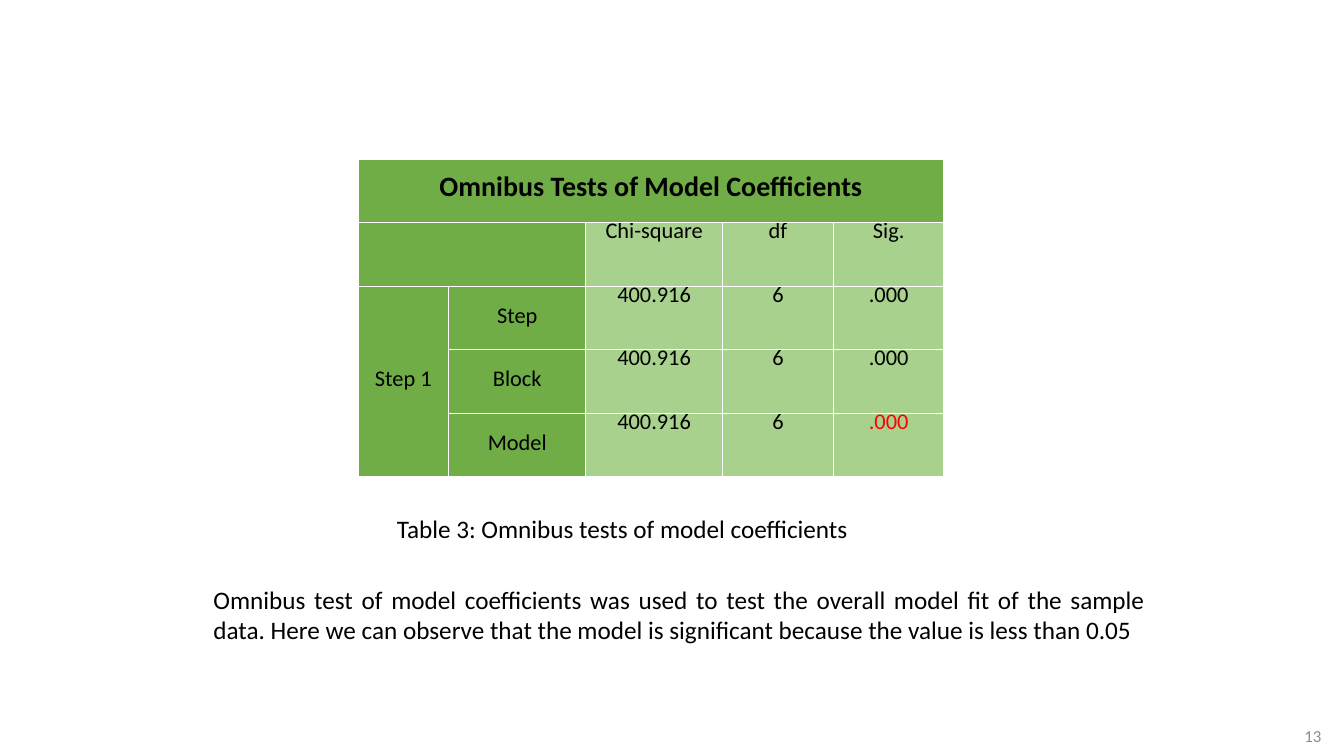
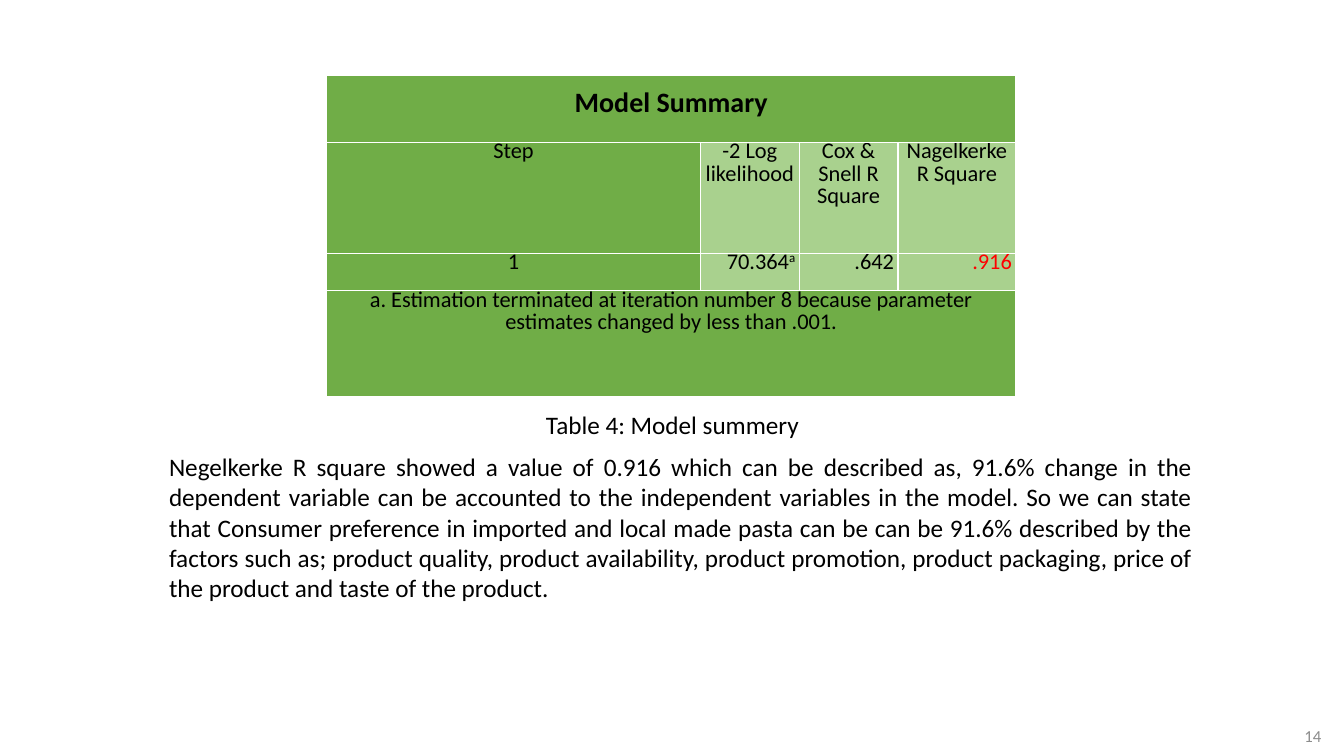
from dataclasses import dataclass

from lxml.etree import SubElement
from pptx import Presentation
from pptx.dml.color import RGBColor
from pptx.enum.text import MSO_ANCHOR, PP_ALIGN
from pptx.oxml.ns import qn
from pptx.slide import Slide
from pptx.table import _Cell
from pptx.util import Cm, Length, Pt


@dataclass(frozen=True)
class Theme:
    font: str = "Calibri"
    text: RGBColor = RGBColor(0x00, 0x00, 0x00)
    highlight: RGBColor = RGBColor(0xFF, 0x00, 0x00)
    page_number: RGBColor = RGBColor(0x8C, 0x8C, 0x8C)
    header_fill: RGBColor = RGBColor(0x70, 0xAD, 0x47)
    value_fill: RGBColor = RGBColor(0xA9, 0xD1, 0x8E)
    border: str = "FFFFFF"
    border_width: Length = Pt(1)
    title_size: Length = Pt(20)
    body_size: Length = Pt(18)
    cell_size: Length = Pt(16)
    cell_line: Length = Pt(16)
    number_size: Length = Pt(12)


THEME = Theme()


@dataclass(frozen=True)
class Entry:
    """One table cell; an entry that spans hides the None entries it covers."""
    text: str = ""
    header: bool = False
    title: bool = False
    highlight: bool = False
    superscript: str = ""
    align: PP_ALIGN = PP_ALIGN.CENTER
    anchor: MSO_ANCHOR = MSO_ANCHOR.TOP
    rows: int = 1
    columns: int = 1


@dataclass(frozen=True)
class TableLayout:
    left: float
    top: float
    widths: list[float]
    heights: list[float]
    entries: list[list[Entry | None]]


@dataclass(frozen=True)
class TextBlock:
    text: str
    left: float
    top: float
    width: float
    height: float
    align: PP_ALIGN = PP_ALIGN.LEFT
    anchor: MSO_ANCHOR = MSO_ANCHOR.TOP
    size: Length = THEME.body_size
    color: RGBColor = THEME.text


@dataclass(frozen=True)
class Page:
    number: int
    table: TableLayout
    caption: TextBlock
    body: TextBlock


def title(text: str, columns: int) -> list[Entry | None]:
    """A heading row across the whole table."""
    return [Entry(text, header=True, title=True, columns=columns)] + [None] * (columns - 1)


def side(text: str, rows: int = 1) -> Entry:
    """A row label at the left of the values."""
    return Entry(text, header=True, anchor=MSO_ANCHOR.MIDDLE, rows=rows)


def test_row(first: Entry | None, label: str, highlight: bool = False) -> list[Entry | None]:
    return [first, side(label), Entry("400.916"), Entry("6"), Entry(".000", highlight=highlight)]


OMNIBUS_TABLE = TableLayout(
    9.02, 4.01, [2.29, 3.45, 3.45, 2.79, 2.79], [1.6] * 5,
    [
        title("Omnibus Tests of Model Coefficients", 5),
        [Entry(header=True, columns=2), None, Entry("Chi-square"), Entry("df"), Entry("Sig.")],
        test_row(side("Step 1", rows=3), "Step"),
        test_row(None, "Block"),
        test_row(None, "Model", highlight=True),
    ],
)

SUMMARY_TABLE = TableLayout(
    8.23, 1.91, [9.42, 2.49, 2.49, 2.97], [1.68, 2.79, 0.95, 2.67],
    [
        title("Model Summary", 4),
        [Entry("Step", header=True), Entry("-2 Log likelihood"),
         Entry("Cox & Snell R Square"), Entry("Nagelkerke R Square")],
        [Entry("1", header=True),
         Entry("70.364", superscript="a", align=PP_ALIGN.RIGHT),
         Entry(".642", align=PP_ALIGN.RIGHT),
         Entry(".916", highlight=True, align=PP_ALIGN.RIGHT)],
        [Entry("a. Estimation terminated at iteration number 8 because parameter "
               "estimates changed by less than .001.", header=True, columns=4),
         None, None, None],
    ],
)

PAGES = [
    Page(
        13,
        OMNIBUS_TABLE,
        TextBlock("Table 3: Omnibus tests of model coefficients", 9.75, 12.8, 13.31, 1.02),
        TextBlock("Omnibus test of model coefficients was used to test the overall model fit "
                  "of the sample data. Here we can observe that the model is significant "
                  "because the value is less than 0.05",
                  5.13, 14.6, 23.98, 1.8, PP_ALIGN.JUSTIFY),
    ),
    Page(
        14,
        SUMMARY_TABLE,
        TextBlock("Table 4: Model summery", 13.51, 10.19, 7.34, 1.02),
        TextBlock("Negelkerke R square showed a value of 0.916 which can be described as, "
                  "91.6% change in the dependent variable can be accounted to the independent "
                  "variables in the model. So we can state that Consumer preference in imported "
                  "and local made pasta can be can be 91.6% described by the factors such as; "
                  "product quality, product availability, product promotion, product packaging, "
                  "price of the product and taste of the product.",
                  4.01, 11.25, 26.29, 4.88, PP_ALIGN.JUSTIFY),
    ),
]


def add_borders(cell: _Cell) -> None:
    properties = cell._tc.get_or_add_tcPr()
    for side_name in ("lnL", "lnR", "lnT", "lnB"):
        line = SubElement(properties, qn(f"a:{side_name}"), w=str(THEME.border_width))
        fill = SubElement(line, qn("a:solidFill"))
        SubElement(fill, qn("a:srgbClr"), val=THEME.border)


def fill_cell(cell: _Cell, entry: Entry) -> None:
    cell.fill.solid()
    cell.fill.fore_color.rgb = THEME.header_fill if entry.header else THEME.value_fill
    cell.margin_left = cell.margin_right = Cm(0.1)
    cell.margin_top = THEME.cell_line if entry.title else 0
    cell.margin_bottom = 0
    cell.vertical_anchor = entry.anchor
    paragraph = cell.text_frame.paragraphs[0]
    paragraph.alignment = entry.align
    paragraph.line_spacing = THEME.cell_line
    font = paragraph.font
    font.name = THEME.font
    font.size = THEME.title_size if entry.title else THEME.cell_size
    font.bold = entry.title
    font.color.rgb = THEME.highlight if entry.highlight else THEME.text
    if entry.text:
        paragraph.add_run().text = entry.text
    if entry.superscript:
        run = paragraph.add_run()
        run.text = entry.superscript
        run._r.get_or_add_rPr().set("baseline", "30000")


def add_table(slide: Slide, layout: TableLayout) -> None:
    table = slide.shapes.add_table(
        len(layout.heights), len(layout.widths), Cm(layout.left), Cm(layout.top),
        Cm(sum(layout.widths)), Cm(sum(layout.heights)),
    ).table
    table.first_row = table.horz_banding = False
    for column, width in zip(table.columns, layout.widths):
        column.width = Cm(width)
    for row, height in zip(table.rows, layout.heights):
        row.height = Cm(height)
    for row_index, entries in enumerate(layout.entries):
        for column_index, entry in enumerate(entries):
            cell = table.cell(row_index, column_index)
            add_borders(cell)
            if entry is None:
                continue
            if entry.rows > 1 or entry.columns > 1:
                cell.merge(table.cell(row_index + entry.rows - 1,
                                      column_index + entry.columns - 1))
            fill_cell(cell, entry)


def add_text(slide: Slide, block: TextBlock) -> None:
    shape = slide.shapes.add_textbox(
        Cm(block.left), Cm(block.top), Cm(block.width), Cm(block.height))
    frame = shape.text_frame
    frame.word_wrap = True
    frame.vertical_anchor = block.anchor
    paragraph = frame.paragraphs[0]
    paragraph.text = block.text
    paragraph.alignment = block.align
    paragraph.font.name = THEME.font
    paragraph.font.size = block.size
    paragraph.font.color.rgb = block.color


def add_page_number(slide: Slide, number: int) -> None:
    add_text(slide, TextBlock(str(number), 25.93, 18.03, 7.62, 1.02, PP_ALIGN.RIGHT,
                              MSO_ANCHOR.MIDDLE, THEME.number_size, THEME.page_number))


def main() -> None:
    presentation = Presentation()
    presentation.slide_width = Cm(33.87)
    presentation.slide_height = Cm(19.05)
    blank_layout = presentation.slide_layouts[6]
    for page in PAGES:
        slide = presentation.slides.add_slide(blank_layout)
        add_table(slide, page.table)
        add_text(slide, page.caption)
        add_text(slide, page.body)
        add_page_number(slide, page.number)
    presentation.save("out.pptx")


if __name__ == "__main__":
    main()
